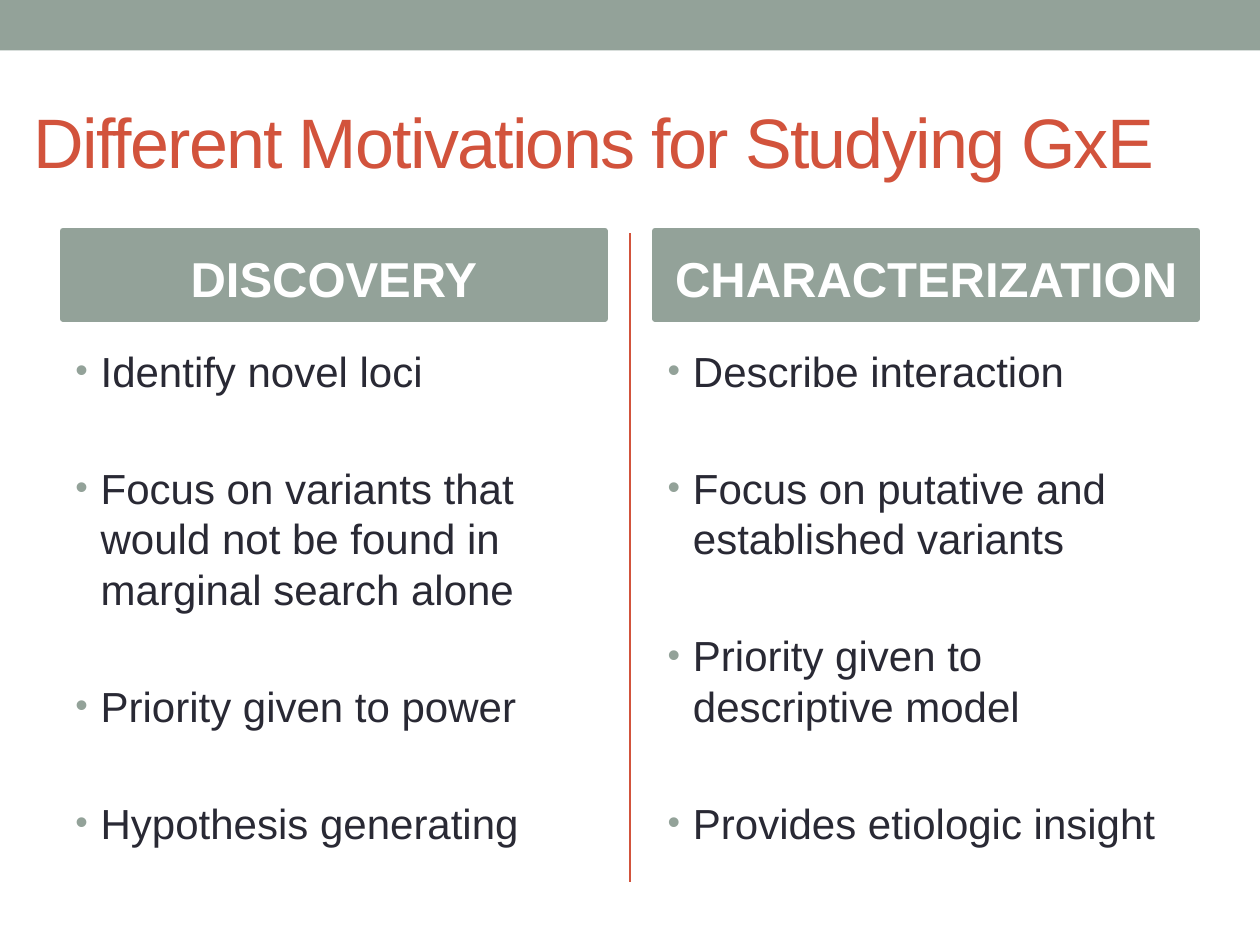
import pptx
import pptx.dml.color
import pptx.enum.shapes
import pptx.enum.text
import pptx.util
from lxml import etree

Cm, Pt = pptx.util.Cm, pptx.util.Pt
PP_ALIGN = pptx.enum.text.PP_ALIGN
ANCHOR = pptx.enum.text.MSO_ANCHOR
RECTANGLE = pptx.enum.shapes.MSO_SHAPE.RECTANGLE

heading = "Different Motivations for Studying GxE"
motivations = [
    ("DISCOVERY", [
        "Identify novel loci",
        "Focus on variants that would not be found in marginal search alone",
        "Priority given to power",
        "Hypothesis generating",
    ]),
    ("CHARACTERIZATION", [
        "Describe interaction",
        "Focus on putative and established variants",
        "Priority given to descriptive model",
        "Provides etiologic insight",
    ]),
]

theme = {
    "font": "Arial",
    "sage": "93A299", "rust": "D2533C", "ink": "292934", "white": "FFFFFF",
    "heading": 40, "label": 28, "point": 24, "leading": 28.8, "gap": 38.1,
}

slide_width, slide_height = 25.4, 19.05
margin, column_width = 1.27, 10.92
column_step = slide_width - 2 * margin - column_width
label_top, label_height = 4.65, 1.78
points_top, points_height = 6.78, 10.97
bullet_indent = 0.51


def rgb(name):
    return pptx.dml.color.RGBColor.from_string(theme[name])


def apply(target, formats):
    for attribute, value in formats.items():
        setattr(target, attribute, value)


def band(left, top, width, height):
    block = slide.shapes.add_shape(RECTANGLE, Cm(left), Cm(top), Cm(width), Cm(height))
    block.shadow.inherit = False
    block.fill.solid()
    block.fill.fore_color.rgb = rgb("sage")
    block.line.fill.background()
    return block


def write(holder, lines, size, color, frame_formats, paragraph_formats, bold=False):
    frame = holder.text_frame
    apply(frame, {"word_wrap": True, **frame_formats})
    for index, line in enumerate(lines):
        paragraph = frame.paragraphs[0] if index == 0 else frame.add_paragraph()
        apply(paragraph, paragraph_formats)
        run = paragraph.add_run()
        run.text = line
        apply(run.font, {"name": theme["font"], "size": Pt(theme[size]), "bold": bold})
        run.font.color.rgb = rgb(color)
    return frame.paragraphs


def add_bullet(paragraph):
    properties = paragraph._p.get_or_add_pPr()
    properties.set("marL", str(Cm(bullet_indent)))
    properties.set("indent", str(-Cm(bullet_indent)))
    ns = pptx.oxml.ns.qn
    bullet_color = etree.SubElement(properties, ns("a:buClr"))
    etree.SubElement(bullet_color, ns("a:srgbClr"), val=theme["sage"])
    etree.SubElement(properties, ns("a:buSzPct"), val="85000")
    etree.SubElement(properties, ns("a:buFont"), typeface=theme["font"])
    etree.SubElement(properties, ns("a:buChar"), char="•")


deck = pptx.Presentation()
apply(deck, {"slide_width": Cm(slide_width), "slide_height": Cm(slide_height)})
slide = deck.slides.add_slide(deck.slide_layouts[6])

band(0, 0, slide_width, 1.02)

center = Cm(slide_width / 2)
divider = slide.shapes.add_connector(
    pptx.enum.shapes.MSO_CONNECTOR.STRAIGHT, center, Cm(4.7), center, Cm(17.78))
divider.line.color.rgb = rgb("rust")
divider.line.width = Pt(1.5)
etree.SubElement(divider._element.spPr, pptx.oxml.ns.qn("a:effectLst"))

title = slide.shapes.add_textbox(Cm(0.43), Cm(1.47), Cm(24.59), Cm(2.74))
title_lines = write(title, [heading], "heading", "rust",
                    {"vertical_anchor": ANCHOR.MIDDLE}, {"alignment": PP_ALIGN.LEFT})
title_lines[0].runs[0].font._element.set("spc", "-100")

for column, (label, points) in enumerate(motivations):
    left = margin + column * column_step
    label_band = band(left, label_top, column_width, label_height)
    label_band.line.color.rgb = rgb("sage")
    label_band.line.width = Pt(3.5)
    write(label_band, [label], "label", "white",
          {"vertical_anchor": ANCHOR.MIDDLE, "margin_top": Cm(0.25)},
          {"alignment": PP_ALIGN.CENTER}, bold=True)

    points_box = slide.shapes.add_textbox(
        Cm(left), Cm(points_top), Cm(column_width), Cm(points_height))
    paragraphs = write(points_box, points, "point", "ink",
                       {"vertical_anchor": ANCHOR.TOP, "margin_top": Cm(0.18)},
                       {"line_spacing": Pt(theme["leading"]), "space_before": Pt(theme["gap"])})
    paragraphs[0].space_before = Pt(0)
    for paragraph in paragraphs:
        add_bullet(paragraph)

deck.save("out.pptx")
